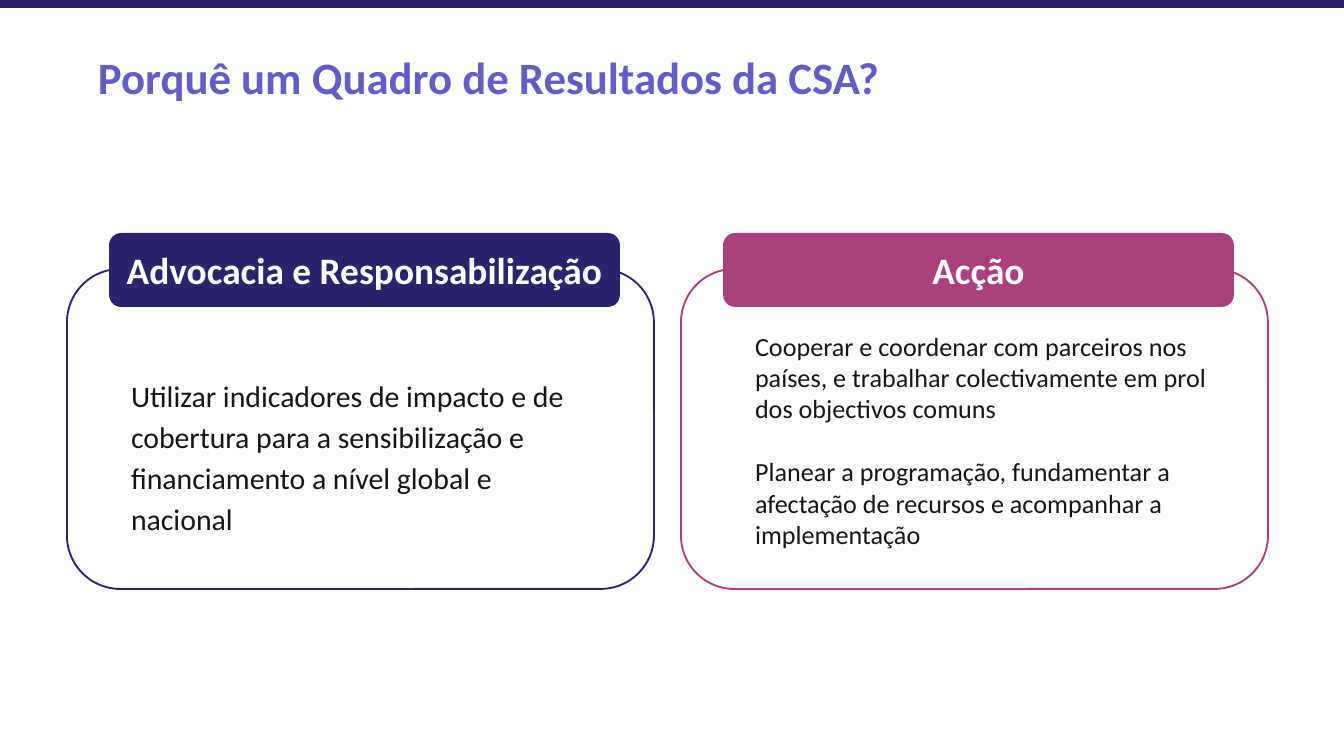
from pptx import Presentation
from pptx.dml.color import RGBColor
from pptx.enum.shapes import MSO_SHAPE
from pptx.enum.text import MSO_ANCHOR, PP_ALIGN
from pptx.util import Emu, Pt

RECT, ROUND = MSO_SHAPE.RECTANGLE, MSO_SHAPE.ROUNDED_RECTANGLE
TOP, MIDDLE = MSO_ANCHOR.TOP, MSO_ANCHOR.MIDDLE
LEFT, CENTER = PP_ALIGN.LEFT, PP_ALIGN.CENTER

W, H = 1344, 756
EMU_PER_PX = 914400 / 134.4
COLORS = {"navy": "2A246C", "plum": "AA417C", "violet": "645DC7",
          "ink": "171616", "white": "FFFFFF"}

CARD_TOP, CARD_W, CARD_H = 269, 587, 320
CARD_LEFT, CARD_PITCH = 67, 614
CARDS = [
    {"heading": "Advocacia e Responsabilização", "color": "navy",
     "paragraphs": ["Utilizar indicadores de impacto e de cobertura para a "
                    "sensibilização e financiamento a nível global e nacional"],
     "body_box": (27, 96, 517, 215),
     "style": {"size": 16, "line_spacing": 1.15}},
    {"heading": "Acção", "color": "plum",
     "paragraphs": ["Cooperar e coordenar com parceiros nos países, e trabalhar "
                    "colectivamente em prol dos objectivos comuns",
                    "Planear a programação, fundamentar a afectação de recursos "
                    "e acompanhar a implementação"],
     "body_box": (37, 54, 513, 266),
     "style": {"size": 14, "space_before": 17}},
]


def px(n):
    return Emu(round(n * EMU_PER_PX))


def rgb(name):
    return RGBColor.from_string(COLORS[name])


def add_box(slide, kind, box, fill=None, line=None):
    s = slide.shapes.add_shape(kind, *map(px, box))
    s.shadow.inherit = False
    if fill:
        s.fill.solid()
        s.fill.fore_color.rgb = rgb(fill)
    else:
        s.fill.background()
    if line:
        s.line.color.rgb = rgb(line)
        s.line.width = Pt(1)
    else:
        s.line.fill.background()
    return s


def write(s, *paragraphs, size, color, bold=False, align=LEFT, anchor=TOP,
          indent=0, line_spacing=None, space_before=0):
    """Fill a shape with paragraphs; space_before applies from the second on."""
    tf = s.text_frame
    tf.word_wrap = True
    tf.vertical_anchor = anchor
    tf.margin_left = tf.margin_right = px(13)
    tf.margin_top = tf.margin_bottom = px(7)
    for i, text in enumerate(paragraphs):
        p = tf.add_paragraph() if i else tf.paragraphs[0]
        p.alignment = align
        if indent:
            p._p.get_or_add_pPr().set("marL", str(px(indent)))
        if line_spacing:
            p.line_spacing = line_spacing
        if i:
            p.space_before = Pt(space_before)
        r = p.add_run()
        r.text = text
        r.font.name = "Calibri"
        r.font.size = Pt(size)
        r.font.bold = bold
        r.font.color.rgb = rgb(color)


def add_text(slide, box, *paragraphs, **style):
    write(slide.shapes.add_textbox(*map(px, box)), *paragraphs, **style)


def add_header(slide, x, y, w):
    add_box(slide, RECT, (x, y, w, 8), fill="navy")
    add_text(slide, (x + 85, y + 43, w - 85, 74),
             "Porquê um Quadro de Resultados da CSA?",
             size=24, color="violet", bold=True)


def add_card(slide, x, y, w, h, card):
    """Outlined panel with body text and a heading tab across its top edge."""
    add_box(slide, ROUND, (x, y, w, h), line=card["color"])
    dx, dy, body_w, body_h = card["body_box"]
    add_text(slide, (x + dx, y + dy, body_w, body_h), *card["paragraphs"],
             color="ink", indent=24, **card["style"])
    tab = add_box(slide, ROUND, (x + 42, y - 36, w - 76, 74), fill=card["color"])
    write(tab, card["heading"], size=20, color="white", bold=True,
          align=CENTER, anchor=MIDDLE)


def main():
    prs = Presentation()
    prs.slide_width, prs.slide_height = px(W), px(H)
    slide = prs.slides.add_slide(prs.slide_layouts[6])
    add_header(slide, 0, 0, W)
    for i, card in enumerate(CARDS):
        add_card(slide, CARD_LEFT + i * CARD_PITCH, CARD_TOP, CARD_W, CARD_H, card)
    prs.save("out.pptx")


if __name__ == "__main__":
    main()
